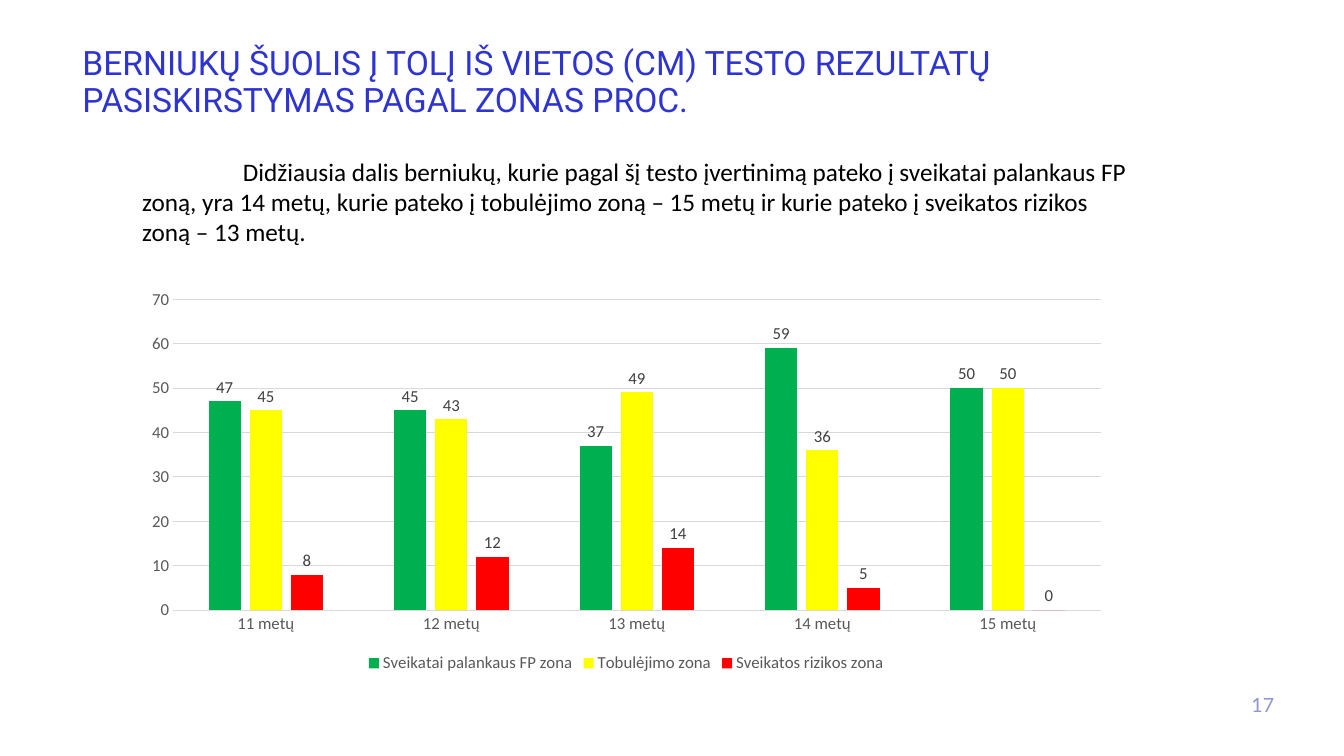
"""Build the slide on boys' standing long jump results by zone."""
from pptx import Presentation
from pptx.chart import data as cd
from pptx.dml.color import RGBColor
from pptx.enum import chart as ce, text as te
from pptx.util import Pt

PX = 9525
THEME = {
    "title": ("Roboto", 24, "2E34D1"),
    "body": ("Calibri", 18, "000000"),
    "page": ("Lato", 14, "8E96CD"),
    "axis": ("Calibri", 12, "595959"),
    "label": ("Calibri", 12, "404040"),
    "grid": "D9D9D9",
}


def style(font, key):
    font.name, size, color = THEME[key]
    font.size = Pt(size)
    font.color.rgb = RGBColor.from_string(color)


def write(key, words, x, y, w, h):
    box = slide.shapes.add_textbox(x * PX, y * PX, w * PX, h * PX)
    frame = box.text_frame
    frame.word_wrap = True
    frame.text = words
    para = frame.paragraphs[0]
    style(para.runs[0].font, key)
    return frame, para


deck = Presentation()
deck.slide_width, deck.slide_height = 1280 * PX, 720 * PX
slide = deck.slides.add_slide(deck.slide_layouts[6])

_, title = write(
    "title",
    "BERNIUKŲ ŠUOLIS Į TOLĮ IŠ VIETOS (CM) TESTO REZULTATŲ "
    "PASISKIRSTYMAS PAGAL ZONAS PROC.",
    69, 40, 1095, 132)
title.line_spacing = 0.9

_, body = write(
    "body",
    "Didžiausia dalis berniukų, kurie pagal šį testo įvertinimą pateko į "
    "sveikatai palankaus FP zoną, yra 14 metų, kurie pateko į tobulėjimo zoną "
    "– 15 metų ir kurie pateko į sveikatos rizikos zoną – 13 metų.",
    126, 144, 965, 97)
body._p.get_or_add_pPr().set("indent", str(96 * PX))

frame, page = write("page", "17", 1173, 652, 50, 38)
frame.vertical_anchor = te.MSO_ANCHOR.MIDDLE
page.alignment = te.PP_ALIGN.RIGHT

zones = [
    ("Sveikatai palankaus FP zona", (47, 45, 37, 59, 50), "00B050"),
    ("Tobulėjimo zona", (45, 43, 49, 36, 50), "FFFF00"),
    ("Sveikatos rizikos zona", (8, 12, 14, 5, 0), "FF0000"),
]
data = cd.CategoryChartData(number_format="0")
data.categories = [f"{age} metų" for age in range(11, 16)]
for name, vals, _ in zones:
    data.add_series(name, vals)
chart = slide.shapes.add_chart(
    ce.XL_CHART_TYPE.COLUMN_CLUSTERED,
    126 * PX, 268 * PX, 941 * PX, 377 * PX, data).chart
chart.has_title = False
style(chart.font, "axis")

plot = chart.plots[0]
plot.gap_width, plot.overlap = 219, -27
plot.vary_by_categories = False
for bars, (_, _, color) in zip(plot.series, zones):
    bars.format.fill.solid()
    bars.format.fill.fore_color.rgb = RGBColor.from_string(color)
    bars.invert_if_negative = False
    labels = bars.data_labels
    labels.show_value = True
    labels.position = ce.XL_LABEL_POSITION.OUTSIDE_END
    style(labels.font, "label")

ages, scale = chart.category_axis, chart.value_axis
for axis in (ages, scale):
    axis.major_tick_mark = axis.minor_tick_mark = ce.XL_TICK_MARK.NONE
    style(axis.tick_labels.font, "axis")
scale.minimum_scale, scale.maximum_scale, scale.major_unit = 0, 70, 10
scale.has_major_gridlines = True
scale.format.line.fill.background()
for line in (ages.format.line, scale.major_gridlines.format.line):
    line.color.rgb = RGBColor.from_string(THEME["grid"])
    line.width = Pt(0.75)

chart.has_legend = True
chart.legend.position = ce.XL_LEGEND_POSITION.BOTTOM
chart.legend.include_in_layout = False
style(chart.legend.font, "axis")

deck.save("out.pptx")
